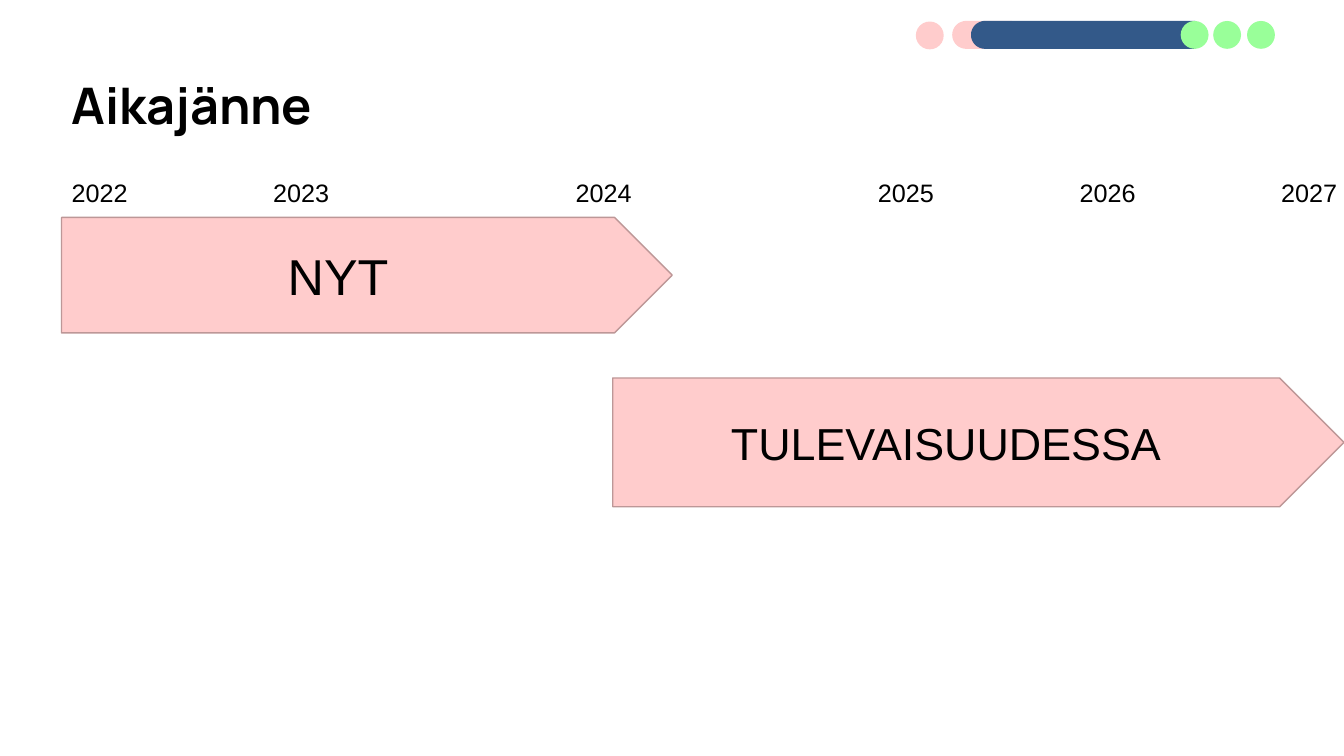
from math import cos, pi, sin

from lxml import etree
from pptx import Presentation
from pptx.dml.color import RGBColor
from pptx.enum.shapes import MSO_SHAPE
from pptx.enum.text import MSO_ANCHOR, MSO_AUTO_SIZE, PP_ALIGN
from pptx.oxml.ns import qn
from pptx.util import Pt

OVAL, ARROW = MSO_SHAPE.OVAL, MSO_SHAPE.RIGHT_ARROW
BOTTOM, MIDDLE = MSO_ANCHOR.BOTTOM, MSO_ANCHOR.MIDDLE
FIT_SHAPE = MSO_AUTO_SIZE.SHAPE_TO_FIT_TEXT
CENTER = PP_ALIGN.CENTER

COLORS = {
    "pink": "FFCCCC",
    "blue": "335989",
    "green": "99FF99",
    "outline": "BD9797",
    "text": "000000",
}


def paint(shape, fill, outline=None):
    shape.shadow.inherit = False
    shape.fill.solid()
    shape.fill.fore_color.rgb = RGBColor.from_string(COLORS[fill])
    if outline:
        shape.line.color.rgb = RGBColor.from_string(COLORS[outline])
        shape.line.width = Pt(1)
    else:
        shape.line.fill.background()


def write(paragraph, text, size, font="Arial", bold=False):
    run = paragraph.add_run()
    run.text = text
    run.font.name = font
    run.font.size = Pt(size)
    run.font.bold = bold
    run.font.color.rgb = RGBColor.from_string(COLORS["text"])


prs = Presentation()
prs.slide_width, prs.slide_height = Pt(960), Pt(540)
slide = prs.slides.add_slide(prs.slide_layouts[6])
shapes = slide.shapes

# Header ornament: bars with a round left end, then dots
DOT = 19.9
RADIUS = DOT / 2
ORNAMENT_TOP = 15
ARC_STEPS = 32

for left, right, color in [(680.2, 722.9, "pink"), (693.6, 853.8, "blue")]:
    angles = [pi / 2 + pi * step / ARC_STEPS for step in range(ARC_STEPS + 1)]
    round_end = [
        (Pt(left + RADIUS + RADIUS * cos(a)), Pt(ORNAMENT_TOP + RADIUS + RADIUS * sin(a)))
        for a in angles
    ]
    square_end = [(Pt(right), Pt(ORNAMENT_TOP)), (Pt(right), Pt(ORNAMENT_TOP + DOT))]
    builder = shapes.build_freeform(*round_end[0])
    builder.add_line_segments(round_end[1:] + square_end, close=True)
    paint(builder.convert_to_shape(), color)

for left, top, color in [
    (843.4, ORNAMENT_TOP, "green"),
    (866.6, ORNAMENT_TOP, "green"),
    (890.8, ORNAMENT_TOP, "green"),
    (654.2, 15.4, "pink"),
]:
    paint(shapes.add_shape(OVAL, Pt(left), Pt(top), Pt(DOT), Pt(DOT)), color)

# Heading
MARGIN = 44
heading = shapes.add_textbox(Pt(MARGIN), Pt(44), Pt(867), Pt(56.2)).text_frame
heading.word_wrap = True
heading.vertical_anchor = BOTTOM
heading.paragraphs[0].line_spacing = 0.9
write(heading.paragraphs[0], "Aikajänne", 36, "Manrope", True)

# Period arrows
for period, left, top, width, height, size in [
    ("NYT", MARGIN, 155.3, 436.2, 82.5, 36),
    ("TULEVAISUUDESSA", 437.7, 270, 522.3, 92, 32),
]:
    arrow = shapes.add_shape(ARROW, Pt(left), Pt(top), Pt(width), Pt(height))
    arrow.adjustments[0] = 1
    arrow.adjustments[1] = 0.5
    paint(arrow, "pink", "outline")
    arrow.text_frame.vertical_anchor = MIDDLE
    arrow.text_frame.paragraphs[0].alignment = CENTER
    write(arrow.text_frame.paragraphs[0], period, size)

# Year scale on evenly spaced tab stops
TAB_STEP = 72
TAB_COUNT = 12
years = shapes.add_textbox(Pt(MARGIN), Pt(123.3), Pt(927.4), Pt(29)).text_frame
years.word_wrap = False
years.auto_size = FIT_SHAPE
scale = years.paragraphs[0]
tab_stops = etree.SubElement(scale._p.get_or_add_pPr(), qn("a:tabLst"))
for number in range(1, TAB_COUNT + 1):
    etree.SubElement(tab_stops, qn("a:tab"), pos=str(Pt(TAB_STEP * number)), algn="l")
write(scale, "2022\t\t2023\t\t\t2024\t\t\t2025\t\t2026\t\t2027", 18)

prs.save("out.pptx")
